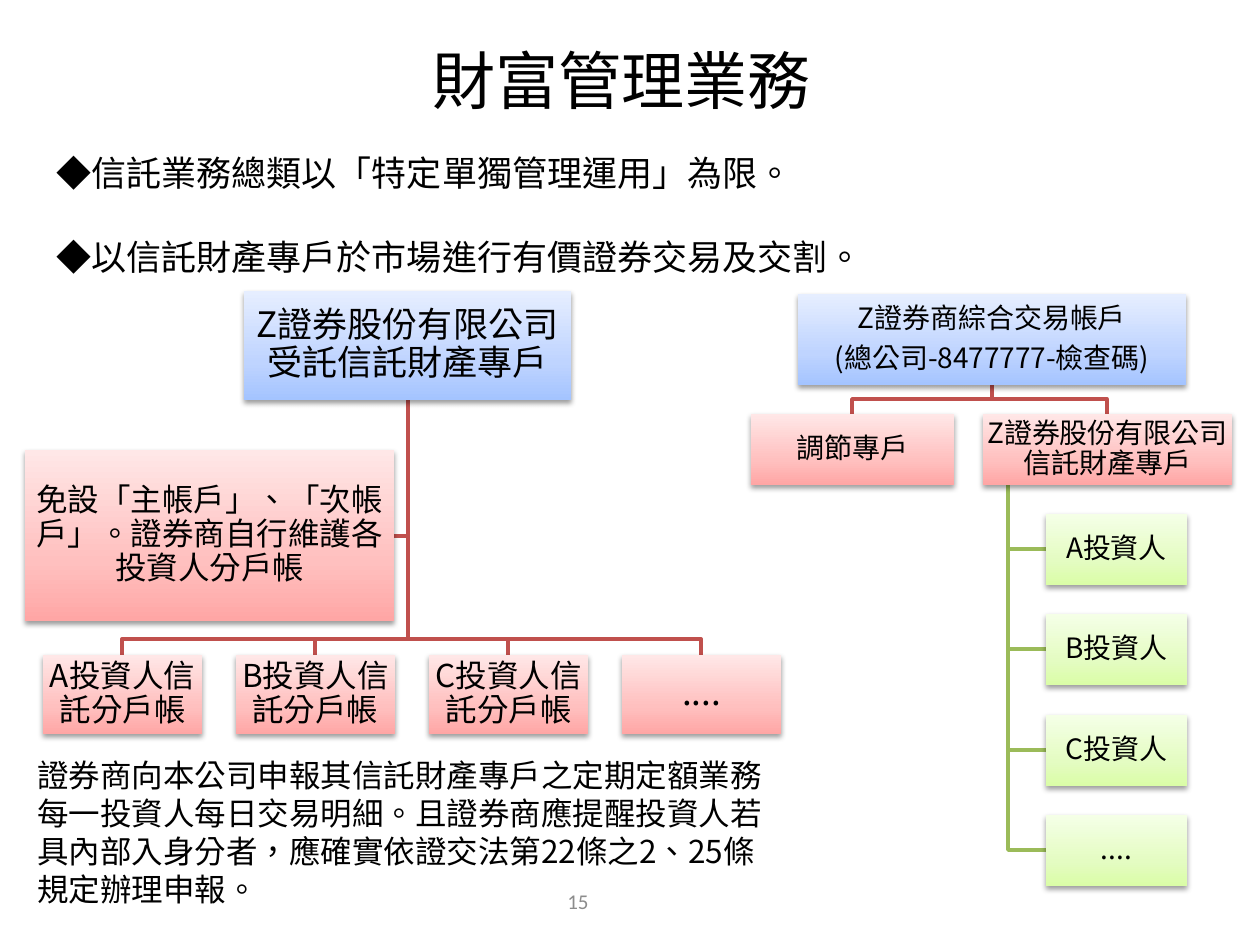
from lxml.etree import SubElement
from pptx import Presentation
from pptx.dml.color import RGBColor
from pptx.enum.lang import MSO_LANGUAGE_ID
from pptx.enum.shapes import MSO_SHAPE
from pptx.enum.text import MSO_ANCHOR, PP_ALIGN
from pptx.oxml import parse_xml
from pptx.oxml.ns import nsdecls, qn
from pptx.util import Inches, Pt

PX = Inches(1) / 126
FONT = "Noto Sans CJK SC"
COLORS = {"text": "000000", "number": "8C8C8C", "red_line": "C0504D", "green_line": "9BBB59"}
GRADIENTS = {
    "blue": ("A4C4FF", "BFD4FF", "E6EEFF"),
    "red": ("FFA6A5", "FFC0BF", "FFE7E7"),
    "green": ("DAFDA7", "E4FCC2", "F5FFE7"),
}
STOPS = (0, 35000, 100000)


def px(*lengths):
    return [round(length * PX) for length in lengths]


def write(shape, lines, size, align=PP_ALIGN.LEFT, color="text", font=FONT,
          anchor=MSO_ANCHOR.TOP, spacing=1.0, gap=0):
    """Fill a shape with paragraphs; gap is the space between them in points."""
    frame = shape.text_frame
    frame.word_wrap = True
    frame.vertical_anchor = anchor
    for index, line in enumerate(lines):
        paragraph = frame.add_paragraph() if index else frame.paragraphs[0]
        paragraph.alignment = align
        paragraph.line_spacing = spacing
        paragraph.space_before = Pt(gap if index else 0)
        run = paragraph.add_run()
        run.text = line
        run.font.size = Pt(size)
        run.font.name = font
        run.font.language_id = MSO_LANGUAGE_ID.TRADITIONAL_CHINESE
        run.font.color.rgb = RGBColor.from_string(COLORS[color])
        SubElement(run.font._element, qn("a:ea"), typeface=font)


def add_text(slide, box, lines, size, **style):
    write(slide.shapes.add_textbox(*px(*box)), lines, size, **style)


def add_card(slide, box, lines, size, palette):
    """Add a gradient box with a soft shadow below and centred text."""
    shape = slide.shapes.add_shape(MSO_SHAPE.RECTANGLE, *px(*box))
    shape.line.fill.background()
    shape.shadow.inherit = False
    stops = "".join(
        f'<a:gs pos="{stop}"><a:srgbClr val="{color}"/></a:gs>'
        for stop, color in zip(STOPS, GRADIENTS[palette])
    )
    properties = shape._element.spPr
    properties.find(qn("a:prstGeom")).addnext(parse_xml(
        f'<a:gradFill {nsdecls("a")} rotWithShape="1"><a:gsLst>{stops}</a:gsLst>'
        '<a:lin ang="16200000" scaled="0"/></a:gradFill>'
    ))
    properties.find(qn("a:effectLst")).append(parse_xml(
        f'<a:outerShdw {nsdecls("a")} blurRad="40000" dist="20000" dir="5400000" rotWithShape="0">'
        '<a:srgbClr val="000000"><a:alpha val="38000"/></a:srgbClr></a:outerShdw>'
    ))
    frame = shape.text_frame
    frame.margin_left = frame.margin_right = frame.margin_top = frame.margin_bottom = Inches(0.01)
    write(shape, lines, size, align=PP_ALIGN.CENTER, anchor=MSO_ANCHOR.MIDDLE, spacing=0.9, gap=6)


def add_branch(slide, points, color):
    start, *rest = points
    builder = slide.shapes.build_freeform(*start, scale=PX)
    builder.add_line_segments(rest, close=False)
    shape = builder.convert_to_shape()
    shape.fill.background()
    shape.line.color.rgb = RGBColor.from_string(COLORS[color])
    shape.line.width = Pt(2)
    shape.shadow.inherit = False


def add_fork(slide, start, bus, ends, color):
    """Lead from start down to the bus height, then along it to each end."""
    x, _ = start
    for end in ends:
        add_branch(slide, [start, (x, bus), (end[0], bus), end], color)


def add_trust_account_tree(slide, left, top):
    trunk, children_top = left + 383, top + 364
    child_width, child_pitch = 159, 193
    labels = ["A投資人信託分戶帳", "B投資人信託分戶帳", "C投資人信託分戶帳", "...."]
    lefts = [left + 18 + index * child_pitch for index in range(len(labels))]
    start = (trunk, top + 109)
    add_branch(slide, [start, (trunk, top + 245), (left + 369, top + 245)], "red_line")
    ends = [(x + child_width // 2, children_top) for x in lefts]
    add_fork(slide, start, top + 348, ends, "red_line")

    add_card(slide, (left + 219, top, 327, 109), ["Z證券股份有限公司受託信託財產專戶"], 20, "blue")
    for x, label in zip(lefts, labels):
        size = 20 if label == "...." else 18
        add_card(slide, (x, children_top, child_width, 79), [label], size, "red")
    add_card(slide, (left, top + 159, 369, 171),
             ["免設「主帳戶」、「次帳戶」。證券商自行維護各投資人分戶帳"], 18, "red")


def add_omnibus_account_tree(slide, left, top):
    height, accounts_top = 71, top + 120
    rail, investors_left = left + 257, left + 295
    investors = ["A投資人", "B投資人", "C投資人", "...."]
    tops = [top + 220 + round(index * 100.3) for index in range(len(investors))]
    accounts = [(left, 203, "調節專戶"), (left + 232, 249, "Z證券股份有限公司信託財產專戶")]
    for y in tops:
        middle = y + height // 2
        points = [(rail, accounts_top + height), (rail, middle), (investors_left, middle)]
        add_branch(slide, points, "green_line")
    ends = [(x + width // 2, accounts_top) for x, width, _ in accounts]
    add_fork(slide, (left + 241, top + 91), top + 105, ends, "red_line")

    add_card(slide, (left + 47, top, 388, 91),
             ["Z證券商綜合交易帳戶", "(總公司-8477777-檢查碼)"], 16, "blue")
    for x, width, label in accounts:
        add_card(slide, (x, accounts_top, width, height), [label], 16, "red")
    for y, label in zip(tops, investors):
        add_card(slide, (investors_left, y, 141, height), [label], 16, "green")


def add_title(slide, box):
    title = slide.shapes.title
    title.left, title.top, title.width, title.height = px(*box)
    write(title, ["財富管理業務"], 36, align=PP_ALIGN.CENTER, anchor=MSO_ANCHOR.MIDDLE)


def main():
    presentation = Presentation()
    presentation.slide_width, presentation.slide_height = px(1260, 945)
    slide = presentation.slides.add_slide(presentation.slide_layouts[5])
    add_title(slide, (54, 0, 1134, 158))
    add_trust_account_tree(slide, 25, 291)
    add_text(slide, (431, 876, 294, 50), ["15"], 12, align=PP_ALIGN.CENTER,
             color="number", font="Calibri", anchor=MSO_ANCHOR.MIDDLE)
    add_text(slide, (44, 145, 860, 139),
             ["◆信託業務總類以「特定單獨管理運用」為限。",
              "◆以信託財產專戶於市場進行有價證券交易及交割。"], 20, gap=24)
    add_text(slide, (25, 750, 753, 165),
             ["證券商向本公司申報其信託財產專戶之定期定額業務每一投資人每日交易明細。"
              "且證券商應提醒投資人若具內部入身分者，應確實依證交法第22條之2、25條規定辦理申報。"], 18)
    add_omnibus_account_tree(slide, 751, 294)
    presentation.save("out.pptx")


if __name__ == "__main__":
    main()
